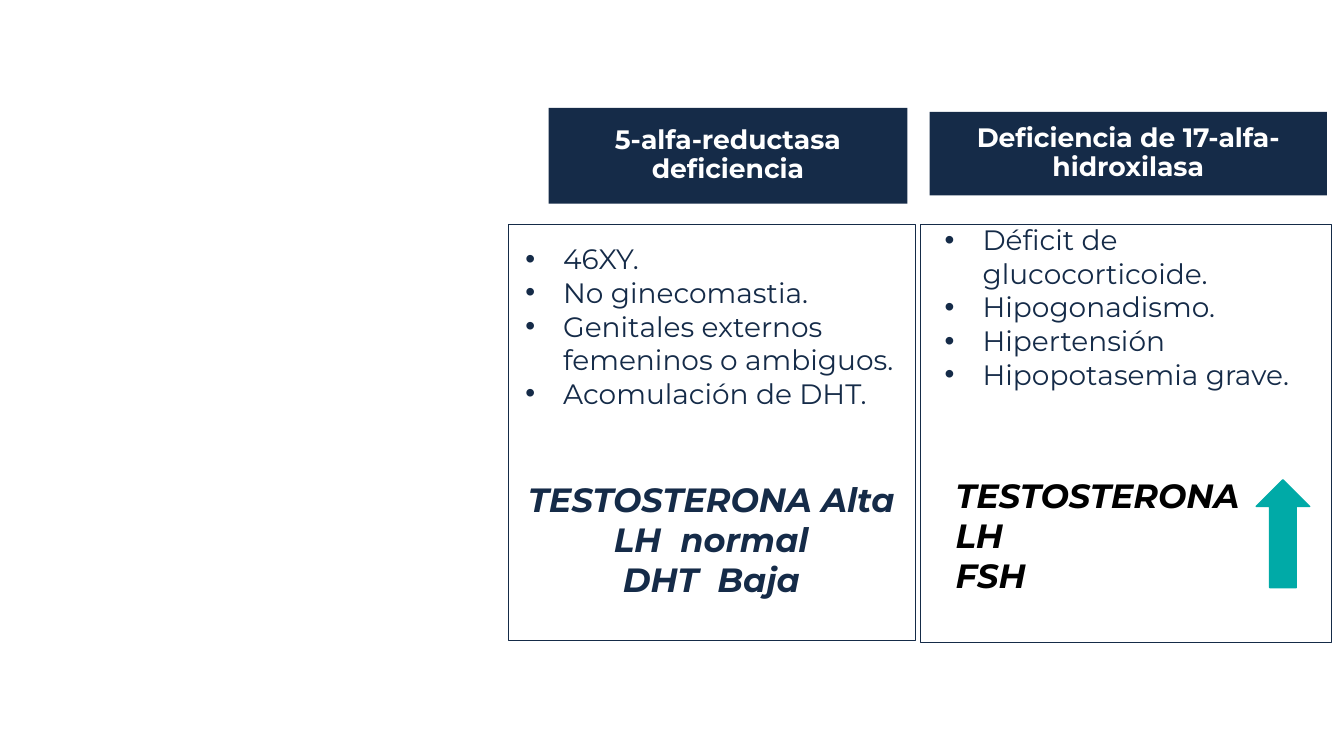
from pptx import Presentation
from pptx.dml.color import RGBColor
from pptx.enum import shapes, text
from pptx.oxml.ns import qn
from pptx.util import Inches, Pt

NAVY = RGBColor(0x15, 0x2B, 0x48)
TEAL = RGBColor(0x00, 0xAA, 0xA7)
WHITE = RGBColor(0xFF, 0xFF, 0xFF)
BLACK = RGBColor(0x00, 0x00, 0x00)


def place(sp, box):
    sp.left, sp.top, sp.width, sp.height = [Inches(v) for v in box]


def write_lines(tf, lines, size, color, bold=False, italic=False):
    """Fill the empty first paragraph, then append; return the new paragraphs."""
    paragraphs = []
    for line in lines:
        p = tf.paragraphs[0]
        if p.text:
            p = tf.add_paragraph()
        p.text = line
        p.space_before = Pt(0)
        p.font.name = "Montserrat"
        p.font.size = Pt(size)
        p.font.color.rgb = color
        p.font.bold = bold
        p.font.italic = italic
        paragraphs.append(p)
    return paragraphs


prs = Presentation()
prs.slide_width, prs.slide_height = Inches(13.33), Inches(7.5)
s = prs.slides.add_slide(prs.slide_layouts.get_by_name("Comparison"))
title = s.shapes.title
title.element.getparent().remove(title.element)

# header placeholder, header text, header box, list placeholder, list box, frame box, items
columns = [
    (1, "5-alfa-reductasa deficiencia", (5.44, 1.07, 3.56, 0.95),
     2, (5.11, 2.35, 3.89, 4.07), (5.04, 2.23, 4.04, 4.12),
     ["46XY.", "No ginecomastia.", "Genitales externos femeninos o ambiguos.",
      "Acomulación de DHT."]),
    (3, "Deficiencia de 17-alfa-hidroxilasa", (9.22, 1.11, 3.94, 0.83),
     4, (9.27, 2.16, 3.89, 1.78), (9.13, 2.23, 4.08, 4.14),
     ["Déficit de glucocorticoide.", "Hipogonadismo.", "Hipertensión",
      "Hipopotasemia grave."]),
]
for header_idx, name, header_box, list_idx, list_box, frame_box, items in columns:
    header = s.placeholders[header_idx]
    place(header, header_box)
    header.fill.solid()
    header.fill.fore_color.rgb = NAVY
    tf = header.text_frame
    tf.auto_size = text.MSO_AUTO_SIZE.NONE
    tf.vertical_anchor = text.MSO_ANCHOR.MIDDLE
    tf.margin_left = tf.margin_right = Inches(0.15)
    tf.margin_top = tf.margin_bottom = Inches(0.08)
    p, = write_lines(tf, [name], 19, WHITE, bold=True)
    p.alignment = text.PP_ALIGN.CENTER
    p.line_spacing = 0.9

    frame = s.shapes.add_shape(shapes.MSO_SHAPE.RECTANGLE,
                               *[Inches(v) for v in frame_box])
    frame.shadow.inherit = False
    frame.fill.background()
    frame.line.color.rgb = NAVY
    frame.line.width = Pt(0.75)

    features = s.placeholders[list_idx]
    place(features, list_box)
    features.text_frame.auto_size = text.MSO_AUTO_SIZE.NONE
    write_lines(features.text_frame, items, 20, NAVY)

# Hormone levels below the left list, without bullets
levels = write_lines(s.placeholders[2].text_frame,
                     ["TESTOSTERONA Alta", "LH  normal", "DHT  Baja"],
                     24, NAVY, bold=True, italic=True)
for p in levels:
    p.alignment = text.PP_ALIGN.CENTER
    pPr = p._p.get_or_add_pPr()
    pPr.set("marL", "0")
    pPr.set("indent", "0")
    pPr.insert_element_before(pPr.makeelement(qn("a:buNone"), {}),
                              "a:tabLst", "a:defRPr", "a:extLst")
levels[0].space_before = Pt(49)

# Raised hormones on the right
hormones = s.shapes.add_textbox(Inches(9.38), Inches(4.66), Inches(3.35), Inches(1.72))
hormones.text_frame.word_wrap = True
write_lines(hormones.text_frame, ["TESTOSTERONA", "LH", "FSH"], 24, BLACK,
            bold=True, italic=True)

arrow = s.shapes.add_shape(shapes.MSO_SHAPE.UP_ARROW, Inches(12.46), Inches(4.76),
                           Inches(0.53), Inches(1.07))
arrow.shadow.inherit = False
arrow.fill.solid()
arrow.fill.fore_color.rgb = TEAL
arrow.line.color.rgb = TEAL
arrow.line.width = Pt(1)

prs.save("out.pptx")
